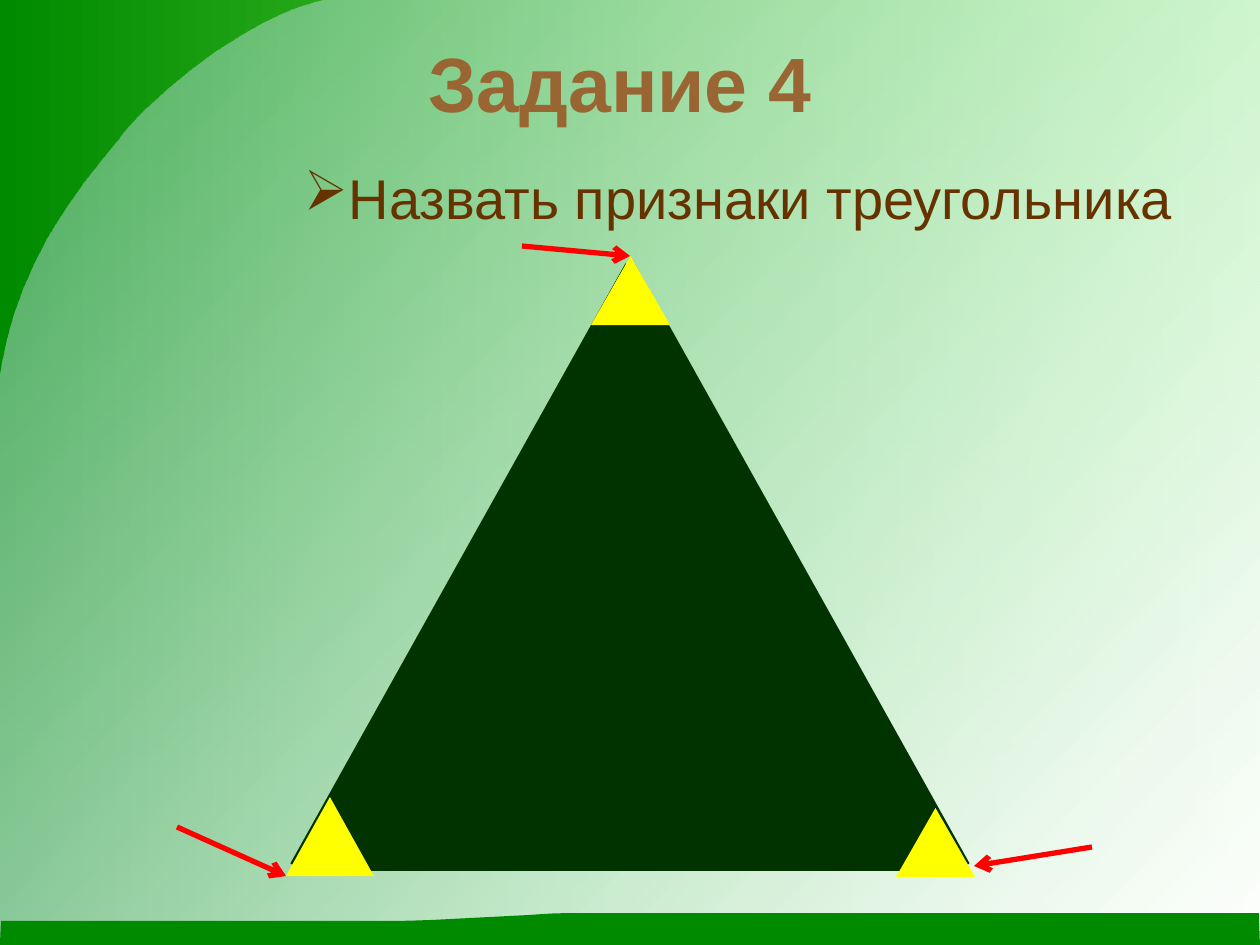
from dataclasses import dataclass

from lxml import etree
from pptx import Presentation
from pptx.dml.color import RGBColor
from pptx.enum import shapes, text
from pptx.oxml.ns import qn
from pptx.util import Pt

PX = 914400 / 126
Point = tuple[int, int]


@dataclass
class Triangle:
    left: int
    top: int
    width: int
    height: int
    fill: str = "FFFF00"
    outline: str | None = None


@dataclass
class Line:
    start: Point
    end: Point
    color: str
    points: int
    arrow: bool = False


@dataclass
class Label:
    left: int
    top: int
    width: int
    height: int
    wording: str
    size: int
    color: str
    bold: bool = False
    bullet: str | None = None


APEX, LEFT_CORNER, RIGHT_CORNER = (630, 266), (295, 866), (965, 866)
MAIN = Triangle(295, 266, 669, 601, "003300", "8AA6A8")
SIDES = [
    Line(APEX, RIGHT_CORNER, "003300", 6),
    Line(APEX, LEFT_CORNER, "003300", 6),
    Line(LEFT_CORNER, RIGHT_CORNER, "003300", 6),
]
CORNERS = [
    Triangle(591, 256, 79, 69),
    Triangle(286, 797, 88, 79),
    Triangle(896, 808, 79, 69),
]
ARROWS = [
    Line((522, 246), (630, 256), "FF0000", 3, True),
    Line((177, 827), (286, 876), "FF0000", 3, True),
    Line((1092, 847), (974, 866), "FF0000", 3, True),
]
LABELS = [
    Label(374, 29, 493, 106, "Задание 4", 44, "996633", bold=True),
    Label(217, 157, 1043, 81, "Назвать признаки треугольника", 32, "663300", bullet="➢"),
]


def emu(pixels: float) -> int:
    return round(pixels * PX)


def rgb(color: str) -> RGBColor:
    return RGBColor.from_string(color)


def set_gradient(fill, first: str, last: str, angle: int) -> None:
    fill.gradient()
    fill.gradient_angle = angle
    for stop, color, position in zip(fill.gradient_stops, (first, last), (0, 1)):
        stop.color.rgb = rgb(color)
        stop.position = position


def bezier(start: Point, a: Point, b: Point, end: Point, steps: int = 24) -> list:
    """Points along a cubic curve, without its start."""
    points = []
    for step in range(1, steps + 1):
        t = step / steps
        weights = ((1 - t) ** 3, 3 * t * (1 - t) ** 2, 3 * t * t * (1 - t), t ** 3)
        points.append(tuple(sum(w * p[axis] for w, p in zip(weights, (start, a, b, end)))
                            for axis in (0, 1)))
    return points


def draw_outline(slide, points: list):
    corners = [(emu(x), emu(y)) for x, y in points]
    builder = slide.shapes.build_freeform(*corners[0])
    builder.add_line_segments(corners[1:], close=True)
    shape = builder.convert_to_shape()
    shape.shadow.inherit = False
    shape.line.fill.background()
    return shape


def draw_triangle(slide, triangle: Triangle) -> None:
    shape = slide.shapes.add_shape(
        shapes.MSO_SHAPE.ISOSCELES_TRIANGLE, emu(triangle.left), emu(triangle.top),
        emu(triangle.width), emu(triangle.height))
    shape.shadow.inherit = False
    shape.fill.solid()
    shape.fill.fore_color.rgb = rgb(triangle.fill)
    if triangle.outline:
        shape.line.color.rgb = rgb(triangle.outline)
        shape.line.width = Pt(2)
    else:
        shape.line.fill.background()


def draw_line(slide, line: Line) -> None:
    connector = slide.shapes.add_connector(
        shapes.MSO_CONNECTOR.STRAIGHT, *map(emu, line.start + line.end))
    connector.line.color.rgb = rgb(line.color)
    connector.line.width = Pt(line.points)
    properties = connector._element.spPr
    if line.arrow:
        etree.SubElement(properties.find(qn("a:ln")), qn("a:tailEnd"), type="arrow")
    etree.SubElement(properties, qn("a:effectLst"))


def draw_label(slide, label: Label) -> None:
    box = slide.shapes.add_textbox(
        emu(label.left), emu(label.top), emu(label.width), emu(label.height))
    frame = box.text_frame
    frame.word_wrap = True
    frame.auto_size = text.MSO_AUTO_SIZE.SHAPE_TO_FIT_TEXT
    frame.text = label.wording
    paragraph = frame.paragraphs[0]
    paragraph.alignment = text.PP_ALIGN.CENTER
    if label.bullet:
        etree.SubElement(paragraph._p.get_or_add_pPr(), qn("a:buChar"), char=label.bullet)
    font = paragraph.runs[0].font
    font.name = "Arial"
    font.size = Pt(label.size)
    font.bold = label.bold
    font.color.rgb = rgb(label.color)


def main() -> None:
    presentation = Presentation()
    presentation.slide_width, presentation.slide_height = emu(1260), emu(945)
    slide = presentation.slides.add_slide(presentation.slide_layouts[6])

    # Background and translucent curved panel
    set_gradient(slide.background.fill, "008A00", "99FF66", 0)
    panel = draw_outline(slide, [
        (325, 0),
        *bezier((325, 0), (239, 20), (146, 105), (123, 135)),
        *bezier((123, 135), (101, 166), (20, 244), (0, 379)),
        (0, 945), (1260, 945), (1260, 0)])
    set_gradient(panel.fill, "BBE0E3", "FFFFFF", 315)
    first_color = next(panel._element.spPr.iter(qn("a:srgbClr")))
    etree.SubElement(first_color, qn("a:alpha"), val="39000")

    # Green strip along the bottom
    strip = draw_outline(slide, [
        (1259, 913), (596, 913),
        *bezier((596, 913), (564, 913), (556, 913), (529, 915)), (431, 920),
        *bezier((431, 920), (403, 921), (398, 921), (360, 921)),
        (1, 921), (0, 945), (1260, 945)])
    strip.fill.solid()
    strip.fill.fore_color.rgb = rgb("008A00")

    # Title and task
    for label in LABELS:
        draw_label(slide, label)

    # Triangle with its sides, corners and pointers to the vertices
    draw_triangle(slide, MAIN)
    for side in SIDES:
        draw_line(slide, side)
    for corner in CORNERS:
        draw_triangle(slide, corner)
    for arrow in ARROWS:
        draw_line(slide, arrow)

    presentation.save("out.pptx")


if __name__ == "__main__":
    main()
